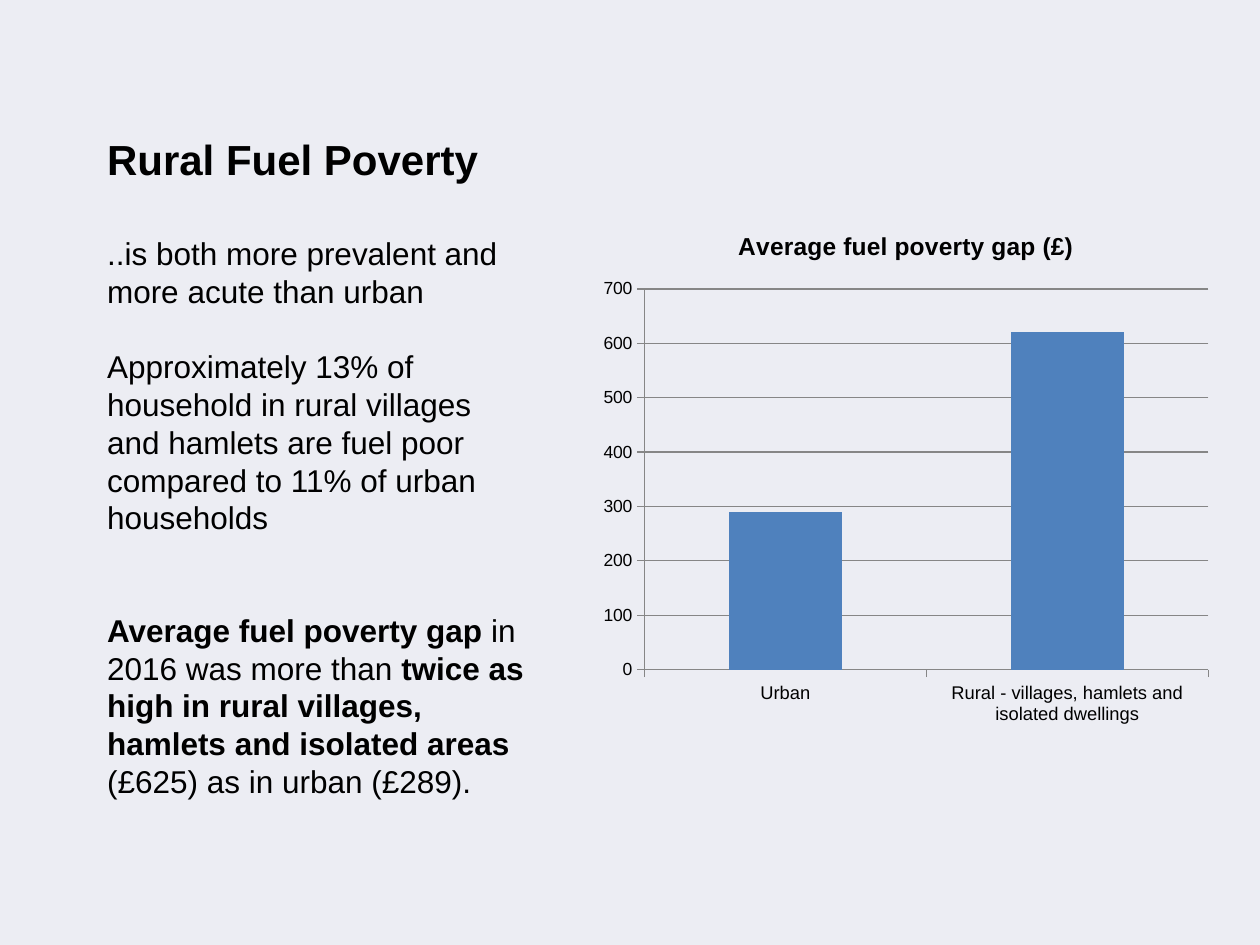
from pptx import Presentation
from pptx import util as u
from pptx.chart import data
from pptx.dml.color import RGBColor
from pptx.enum import chart as c
from pptx.enum import text
from pptx.oxml import parse_xml
from pptx.oxml.ns import nsdecls

BACKGROUND = RGBColor(0xEC, 0xED, 0xF3)
BLACK = RGBColor(0, 0, 0)
BAR_BLUE = RGBColor(0x4F, 0x81, 0xBD)
AXIS_GREY = RGBColor(0x86, 0x86, 0x86)
CHART_TITLE = "Average fuel poverty gap (£)"
BODY_SIZE = 18
LINE = 1.2
BLANK_LINE = 21.3

PARAGRAPHS = [
    (0, [("..is both more prevalent and more acute than urban", False)]),
    (1, [("Approximately 13% of household in rural villages and hamlets "
          "are fuel poor compared to 11% of urban households", False)]),
    (2, [("Average fuel poverty gap", True),
         (" in 2016 was more than ", False),
         ("twice as high in rural villages, hamlets and isolated areas", True),
         (" (£625) as in urban (£289).", False)]),
]


def set_font(font, size, bold=False):
    font.name = "Arial"
    font.size = u.Pt(size)
    font.bold = bold
    font.color.rgb = BLACK


def place(box, left, top, width, height):
    box.left, box.top = u.Inches(left), u.Inches(top)
    box.width, box.height = u.Inches(width), u.Inches(height)
    box.text_frame.word_wrap = True
    box.text_frame.auto_size = text.MSO_AUTO_SIZE.NONE
    box.text_frame.vertical_anchor = text.MSO_ANCHOR.TOP


deck = Presentation()
deck.slide_width, deck.slide_height = u.Inches(10), u.Inches(7.5)
slide = deck.slides.add_slide(deck.slide_layouts[1])
slide.background.fill.solid()
slide.background.fill.fore_color.rgb = BACKGROUND

title = slide.shapes.title
place(title, 0.75, 1.01, 3.54, 0.6)
title.text_frame.text = "Rural Fuel Poverty"
para = title.text_frame.paragraphs[0]
para.alignment = text.PP_ALIGN.LEFT
para.line_spacing = u.Pt(24 * LINE)
set_font(para.runs[0].font, 24, True)

body = slide.placeholders[1]
place(body, 0.75, 1.81, 3.54, 4.65)
for index, (blank_lines, spans) in enumerate(PARAGRAPHS):
    frame = body.text_frame
    para = frame.add_paragraph() if index else frame.paragraphs[0]
    para.line_spacing = u.Pt(BODY_SIZE * LINE)
    para.space_before = u.Pt(blank_lines * BLANK_LINE)
    properties = para._p.get_or_add_pPr()
    properties.set("marL", "0")
    properties.set("indent", "0")
    properties.append(parse_xml(f"<a:buNone {nsdecls('a')}/>"))
    for wording, bold in spans:
        span = para.add_run()
        span.text = wording
        set_font(span.font, BODY_SIZE, bold)

gap_data = data.CategoryChartData()
gap_data.categories = ["Urban", "Rural - villages, hamlets and isolated dwellings"]
gap_data.add_series(CHART_TITLE, [290, 620])
chart = slide.shapes.add_chart(
    c.XL_CHART_TYPE.COLUMN_CLUSTERED, u.Inches(4.69), u.Inches(1.66),
    u.Inches(5), u.Inches(4.17), gap_data).chart
set_font(chart.font, 10)
chart.has_legend = False
chart.has_title = True
chart.chart_title.text_frame.text = CHART_TITLE
set_font(chart.chart_title.text_frame.paragraphs[0].runs[0].font, 14, True)

plot = chart.plots[0]
plot.gap_width = 150
plot.vary_by_categories = False
bars = plot.series[0].format.fill
bars.solid()
bars.fore_color.rgb = BAR_BLUE

for axis, size in ((chart.category_axis, 10.5), (chart.value_axis, 10)):
    set_font(axis.tick_labels.font, size)
    axis.major_tick_mark = c.XL_TICK_MARK.OUTSIDE
    axis.format.line.color.rgb = AXIS_GREY
    axis.format.line.width = u.Pt(0.75)
chart.value_axis.minimum_scale = 0
chart.value_axis.maximum_scale = 700
chart.value_axis.major_unit = 100
gridlines = chart.value_axis.major_gridlines.format.line
gridlines.color.rgb = AXIS_GREY
gridlines.width = u.Pt(0.75)

deck.save("out.pptx")
